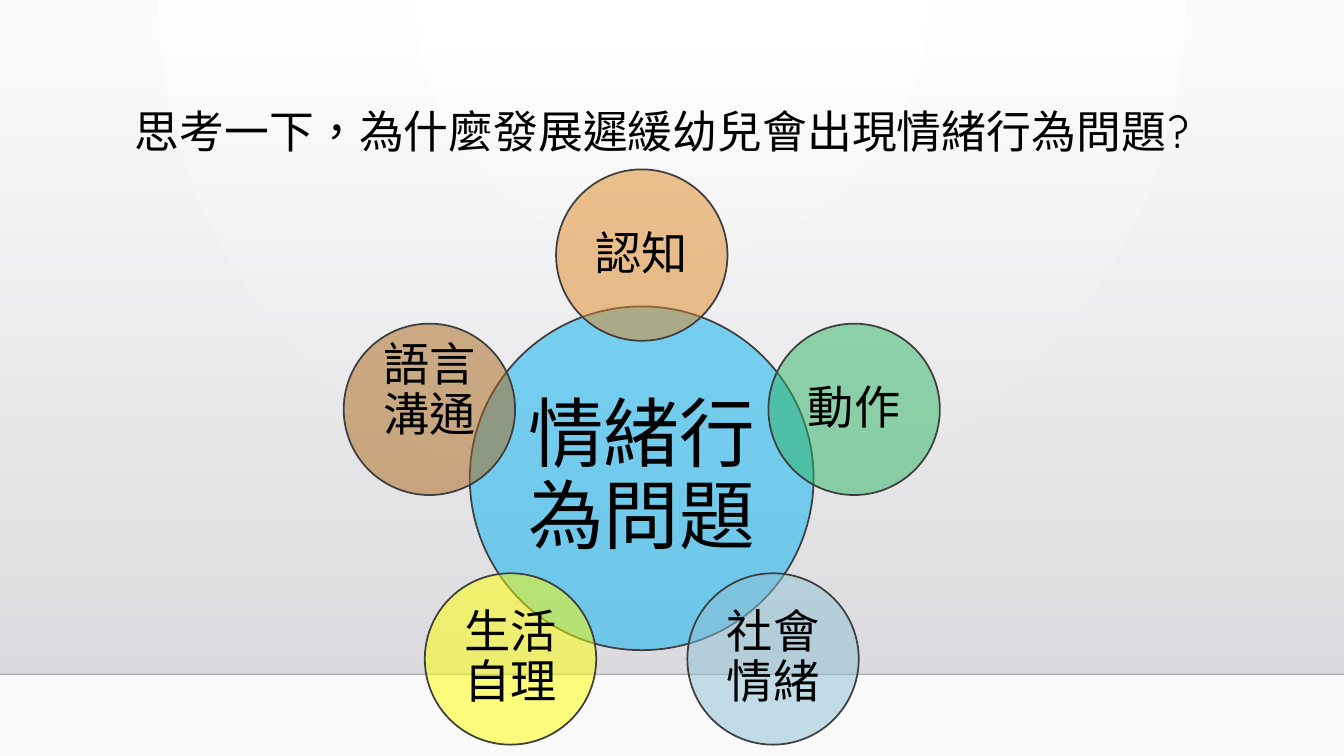
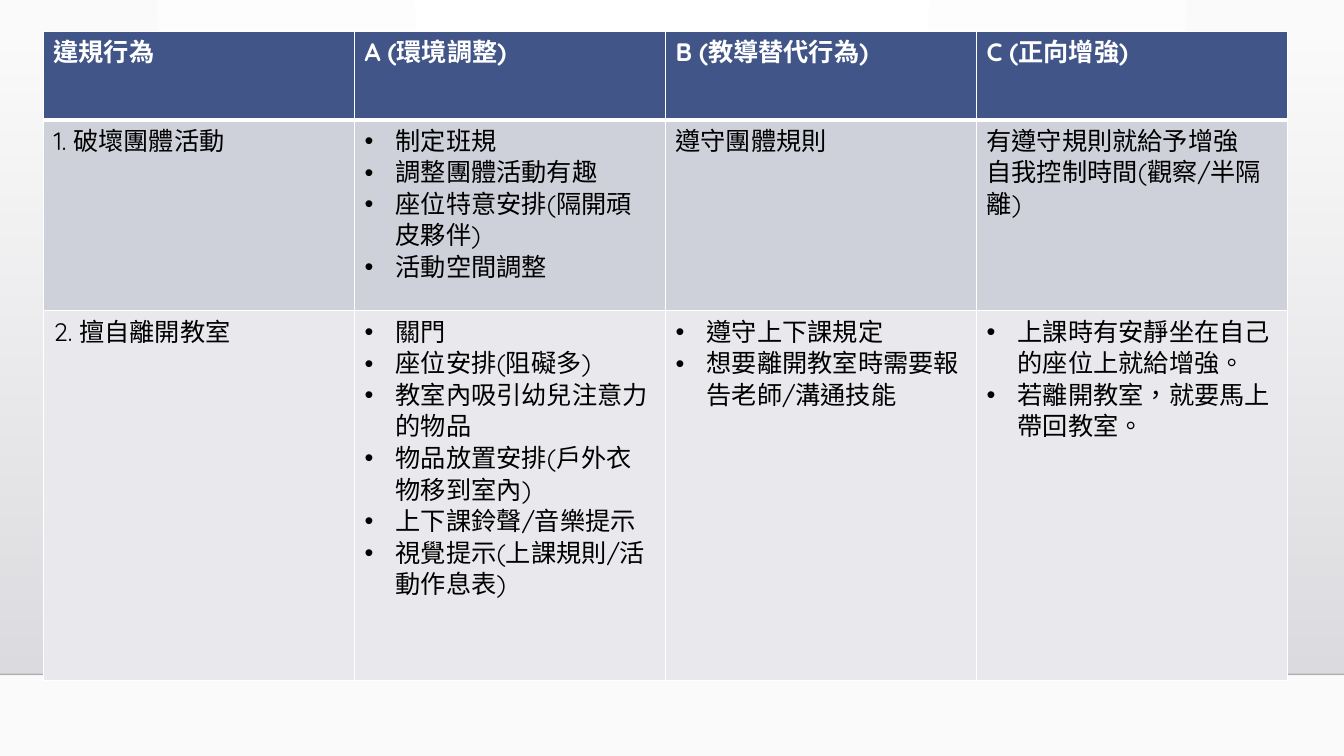
from math import cos, radians, sin

from lxml.etree import SubElement
from pptx import Presentation
from pptx.dml.color import RGBColor
from pptx.enum.shapes import MSO_CONNECTOR, MSO_SHAPE
from pptx.enum.text import MSO_ANCHOR, PP_ALIGN
from pptx.oxml.ns import qn
from pptx.util import Inches, Pt

FONT = "Quicksand"
COLORS = {
    "white": "FFFFFF", "page": "FAFAFA", "black": "000000", "rule": "000001",
    "band_top": "DCDCE0", "band_bottom": "DEDEE2", "outline": "3F3F3F",
    "hub": "00B0F0", "orange": "DF8822", "green": "2CB663", "blue": "8CC0D5",
    "yellow": "FFFF00", "brown": "A86618",
    "header": "415588", "row_dark": "CFD1DA", "row_light": "E9E9ED",
}
RGB = {name: RGBColor.from_string(value) for name, value in COLORS.items()}


def set_alpha(spPr, percent):
    color = next(spPr.iter(qn("a:srgbClr")))
    SubElement(color, qn("a:alpha"), val=str(percent * 1000))


def format_text(p, size, color="black", bold=False):
    for r in p.runs:
        r.font.size = Pt(size)
        r.font.bold = bold
        r.font.color.rgb = RGB[color]
        r.font.name = FONT
        rPr = r._r.get_or_add_rPr()
        rPr.set("lang", "zh-TW")
        SubElement(rPr, qn("a:ea"), typeface=FONT)


prs = Presentation()
prs.slide_width, prs.slide_height = Inches(13.33), Inches(7.5)
col, row = prs.slide_width / 100, prs.slide_height / 100

master = prs.slide_master
fill = master.background.fill
fill.gradient()
for stop, name in zip(fill.gradient_stops, ("white", "page")):
    stop.color.rgb = RGB[name]
grad = next(master._element.iter(qn("a:gradFill")))
grad.remove(grad.find(qn("a:lin")))
circle = SubElement(grad, qn("a:path"))
circle.set("path", "circle")
SubElement(circle, qn("a:fillToRect"), l="43000", t="0", r="43000", b="100000")

slides = [prs.slides.add_slide(prs.slide_layouts[6]) for _ in range(2)]
for s in slides:
    band = s.shapes.add_shape(MSO_SHAPE.RECTANGLE, 0, int(6.8 * row),
                              prs.slide_width, int(82.4 * row))
    band.shadow.inherit = False
    band.line.fill.background()
    band.fill.gradient()
    band.fill.gradient_angle = 270
    for stop, name in zip(band.fill.gradient_stops, ("band_top", "band_bottom")):
        stop.color.rgb = RGB[name]
    set_alpha(band._element.spPr, 0)

    y = int(89.2 * row)
    rule = s.shapes.add_connector(MSO_CONNECTOR.STRAIGHT, 0, y, prs.slide_width, y)
    rule.line.color.rgb = RGB["rule"]
    rule.line.width = Pt(1)
    set_alpha(rule._element.spPr, 20)
    SubElement(rule._element.spPr, qn("a:effectLst"))

s = slides[0]
title = s.shapes.add_textbox(int(9.3 * col), int(13.87 * row), int(82 * col), int(15.33 * row))
tf = title.text_frame
tf.word_wrap = True
tf.text = "思考一下，為什麼發展遲緩幼兒會出現情緒行為問題?"
p = tf.paragraphs[0]
p.line_spacing = 0.9
format_text(p, 32)

center_x, center_y = 47.75 * col, 63.27 * row
orbit, hub_size, node_size = 29.53 * row, 45.47 * row, 22.67 * row
nodes = [("認知", "orange"), ("動作", "green"), ("社會情緒", "blue"),
         ("生活自理", "yellow"), ("語言溝通", "brown")]
circles = [("情緒行為問題", "hub", center_x, center_y, hub_size, 54)]
for i, (text, color) in enumerate(nodes):
    angle = radians(360 / len(nodes) * i - 90)
    circles.append((text, color, center_x + orbit * cos(angle),
                    center_y + orbit * sin(angle), node_size, 33))

for text, color, x, y, size, points in circles:
    sp = s.shapes.add_shape(MSO_SHAPE.OVAL, int(x - size / 2), int(y - size / 2),
                            int(size), int(size))
    sp.shadow.inherit = False
    sp.fill.solid()
    sp.fill.fore_color.rgb = RGB[color]
    set_alpha(sp._element.spPr, 50)
    sp.line.color.rgb = RGB["outline"]
    sp.line.width = Pt(1.25)
    tf = sp.text_frame
    tf.word_wrap = True
    tf.vertical_anchor = MSO_ANCHOR.MIDDLE
    tf.margin_left = tf.margin_right = tf.margin_top = tf.margin_bottom = Inches(0.05)
    if color == "brown":
        tf.margin_bottom = Inches(0.4)
    tf.text = text
    p = tf.paragraphs[0]
    p.alignment = PP_ALIGN.CENTER
    p.line_spacing = 0.9
    format_text(p, points)

s = slides[1]
BULLET = "•"
rows = [
    [["違規行為"], ["A (環境調整)"], ["B (教導替代行為)"], ["C (正向增強)"]],
    [["1. 破壞團體活動"],
     [BULLET, "制定班規", "調整團體活動有趣", "座位特意安排(隔開頑皮夥伴)", "活動空間調整"],
     ["遵守團體規則"],
     ["有遵守規則就給予增強", "自我控制時間(觀察/半隔離)"]],
    [["2. 擅自離開教室"],
     [BULLET, "關門", "座位安排(阻礙多)", "教室內吸引幼兒注意力的物品",
      "物品放置安排(戶外衣物移到室內)", "上下課鈴聲/音樂提示",
      "視覺提示(上課規則/活動作息表)"],
     [BULLET, "遵守上下課規定", "想要離開教室時需要報告老師/溝通技能"],
     [BULLET, "上課時有安靜坐在自己的座位上就給增強。", "若離開教室，就要馬上帶回教室。"]],
]
heights = [11.73, 25.27, 48.93]
fills = ["header", "row_dark", "row_light"]
table = s.shapes.add_table(len(rows), len(rows[0]), int(3.23 * col), int(4.13 * row),
                           int(92.57 * col), int(sum(heights) * row)).table
for i, cells in enumerate(rows):
    table.rows[i].height = int(heights[i] * row)
    is_header = i == 0
    for j, lines in enumerate(cells):
        cell = table.cell(i, j)
        tcPr = cell._tc.get_or_add_tcPr()
        widths = {"L": 1, "R": 1, "T": 3 if i == 1 else 1, "B": 3 if is_header else 1}
        for side, width in widths.items():
            ln = SubElement(tcPr, qn("a:ln" + side), w=str(Pt(width)))
            SubElement(SubElement(ln, qn("a:solidFill")), qn("a:srgbClr"), val=COLORS["white"])
        cell.fill.solid()
        cell.fill.fore_color.rgb = RGB[fills[i]]
        bulleted = lines[0] == BULLET
        cell.text_frame.text = "\n".join(lines[1:] if bulleted else lines)
        for p in cell.text_frame.paragraphs:
            if bulleted:
                pPr = p._p.get_or_add_pPr()
                pPr.set("marL", str(Inches(0.31)))
                pPr.set("indent", str(-Inches(0.31)))
                SubElement(pPr, qn("a:buFont"), typeface="Arial")
                SubElement(pPr, qn("a:buChar"), char=BULLET)
            format_text(p, 18, "white" if is_header else "black", is_header)

prs.save("out.pptx")
